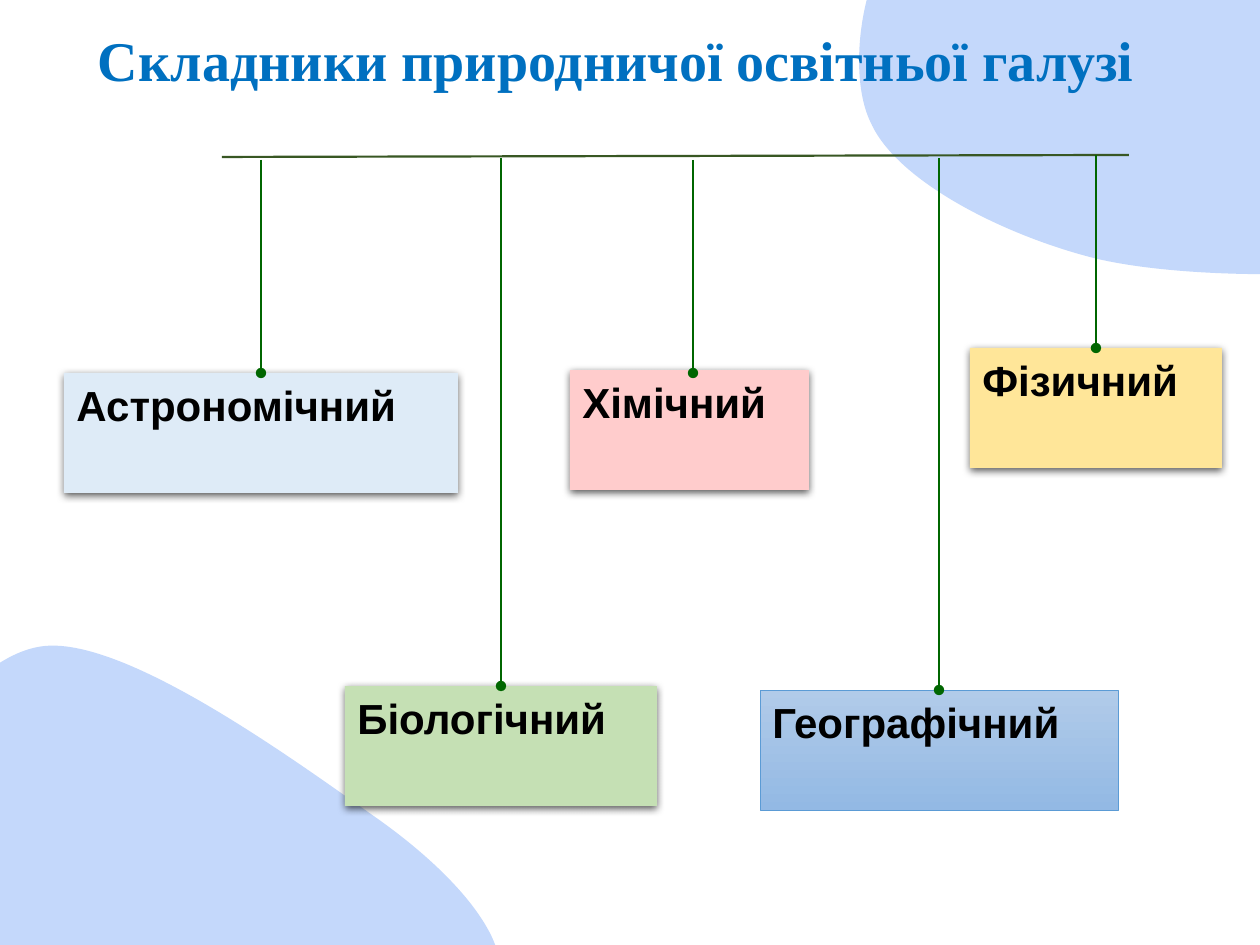
from lxml import etree
from pptx import Presentation
from pptx.dml.color import RGBColor
from pptx.enum.shapes import MSO_CONNECTOR as Connector, MSO_SHAPE as Shape
from pptx.enum.text import MSO_ANCHOR as Anchor, PP_ALIGN as Align
from pptx.oxml.ns import qn
from pptx.util import Pt

PX = 914400 / 126
COLORS = {
    "blob": "C4D8FB", "title": "0070C0", "text": "000000", "shadow": "000000",
    "bar": "385723", "drop": "006600", "outline": "5B9BD5",
    "astronomy": "DEEBF7", "biology": "C5E0B4", "chemistry": "FFCCCC",
    "physics": "FFE699", "geography top": "B1CBE9", "geography bottom": "93B9E4",
}

# Closed Bézier outlines in px: the start, then two handles and an end per curve
TOP_BLOB = [
    (925, -89), (984, -115), (1149, -72), (1226, -30),
    (1303, 11), (1360, 113), (1389, 163), (1418, 212), (1450, 247), (1400, 262),
    (1351, 278), (1178, 280), (1090, 257), (1002, 234), (897, 181), (871, 123),
    (843, 67), (866, -63), (925, -89),
]
BOTTOM_BLOB = [
    (45, 646), (129, 638), (301, 765), (378, 819),
    (454, 873), (500, 930), (500, 968), (501, 1004), (450, 1037), (382, 1042),
    (315, 1047), (181, 1030), (97, 1000), (13, 971), (-113, 926), (-122, 867),
    (-131, 808), (-39, 654), (45, 646),
]

# name, fill, left, top, width, top of the drop line
BRANCHES = [
    ("Астрономічний", "astronomy", 64, 373, 394, 160),
    ("Біологічний", "biology", 345, 686, 312, 158),
    ("Географічний", None, 760, 690, 358, 158),
    ("Фізичний", "physics", 970, 348, 252, 155),
    ("Хімічний", "chemistry", 570, 370, 239, 160),
]
BOX_HEIGHT = 120
CHEMISTRY_DROP_END = (693, 373)  # a little right of its box's middle


def px(*lengths):
    return [round(length * PX) for length in lengths]


def color(name):
    return RGBColor.from_string(COLORS[name])


def add_blob(slide, points):
    """Draw a polygon through all points, then turn each three lines into a curve."""
    builder = slide.shapes.build_freeform(*points[0], scale=PX)
    builder.add_line_segments(points[1:], close=True)
    shape = builder.convert_to_shape()
    lines = list(shape._element.iter(qn("a:lnTo")))
    for first in range(0, len(lines), 3):
        curve = etree.Element(qn("a:cubicBezTo"))
        lines[first].addprevious(curve)
        for line in lines[first:first + 3]:
            curve.append(line[0])
            line.getparent().remove(line)
    shape.shadow.inherit = False
    shape.fill.solid()
    shape.fill.fore_color.rgb = color("blob")
    shape.line.fill.background()


def write(shape, text, font_name, size, color_name, align):
    frame = shape.text_frame
    frame.word_wrap = True
    frame.vertical_anchor = Anchor.TOP
    paragraph = frame.paragraphs[0]
    paragraph.text = text
    paragraph.alignment = align
    font = paragraph.font
    font.name, font.size, font.bold = font_name, Pt(size), True
    font.color.rgb = color(color_name)


def add_shadow(shape):
    effects = shape._element.spPr.find(qn("a:effectLst"))
    shadow = etree.SubElement(effects, qn("a:outerShdw"), blurRad=str(Pt(4.5)),
                              dist=str(Pt(1.5)), dir="5400000", algn="ctr", rotWithShape="0")
    tint = etree.SubElement(shadow, qn("a:srgbClr"), val=COLORS["shadow"])
    etree.SubElement(tint, qn("a:alpha"), val="63000")


def add_box(slide, text, fill_name, left, top, width):
    """Add a named box: shadowed when it has a plain fill, else outlined with a gradient."""
    shape = slide.shapes.add_shape(Shape.RECTANGLE, *px(left, top, width, BOX_HEIGHT))
    shape.shadow.inherit = False
    if fill_name:
        shape.fill.solid()
        shape.fill.fore_color.rgb = color(fill_name)
        shape.line.fill.background()
        add_shadow(shape)
    else:
        shape.fill.gradient()
        shape.fill.gradient_angle = 270
        for stop, name in zip(shape.fill.gradient_stops, ("geography top", "geography bottom")):
            stop.color.rgb = color(name)
        shape.line.color.rgb = color("outline")
        shape.line.width = Pt(0.5)
    write(shape, text, "Arial", 24, "text", Align.LEFT)
    return shape


def add_line(slide, start, end, color_name):
    connector = slide.shapes.add_connector(Connector.STRAIGHT, *px(*start, *end))
    connector.line.color.rgb = color(color_name)
    connector.line.width = Pt(1.25)
    etree.SubElement(connector._element.spPr, qn("a:effectLst"))
    return connector


def add_drop(slide, box, start_y, end=None):
    """Hang a box from the bar; without an end the line joins the box's top middle."""
    x, y = end or ((box.left + box.width / 2) / PX, box.top / PX)
    connector = add_line(slide, (x, start_y), (x, y), "drop")
    etree.SubElement(connector.line._get_or_add_ln(), qn("a:tailEnd"), type="oval")
    if end is None:
        connector.end_connect(box, 0)


def main():
    presentation = Presentation()
    presentation.slide_width, presentation.slide_height = px(1260, 945)
    slide = presentation.slides.add_slide(presentation.slide_layouts[6])

    add_blob(slide, TOP_BLOB)
    add_blob(slide, BOTTOM_BLOB)
    title = slide.shapes.add_textbox(*px(11, 19, 1211, 81))
    write(title, "Складники природничої освітньої галузі",
          "Times New Roman", 32, "title", Align.CENTER)

    boxes = [add_box(slide, *branch[:5]) for branch in BRANCHES]
    add_line(slide, (222, 157), (1129, 155), "bar")
    for box, (_, fill_name, *_, start_y) in zip(boxes, BRANCHES):
        add_drop(slide, box, start_y,
                 CHEMISTRY_DROP_END if fill_name == "chemistry" else None)

    presentation.save("out.pptx")


if __name__ == "__main__":
    main()
